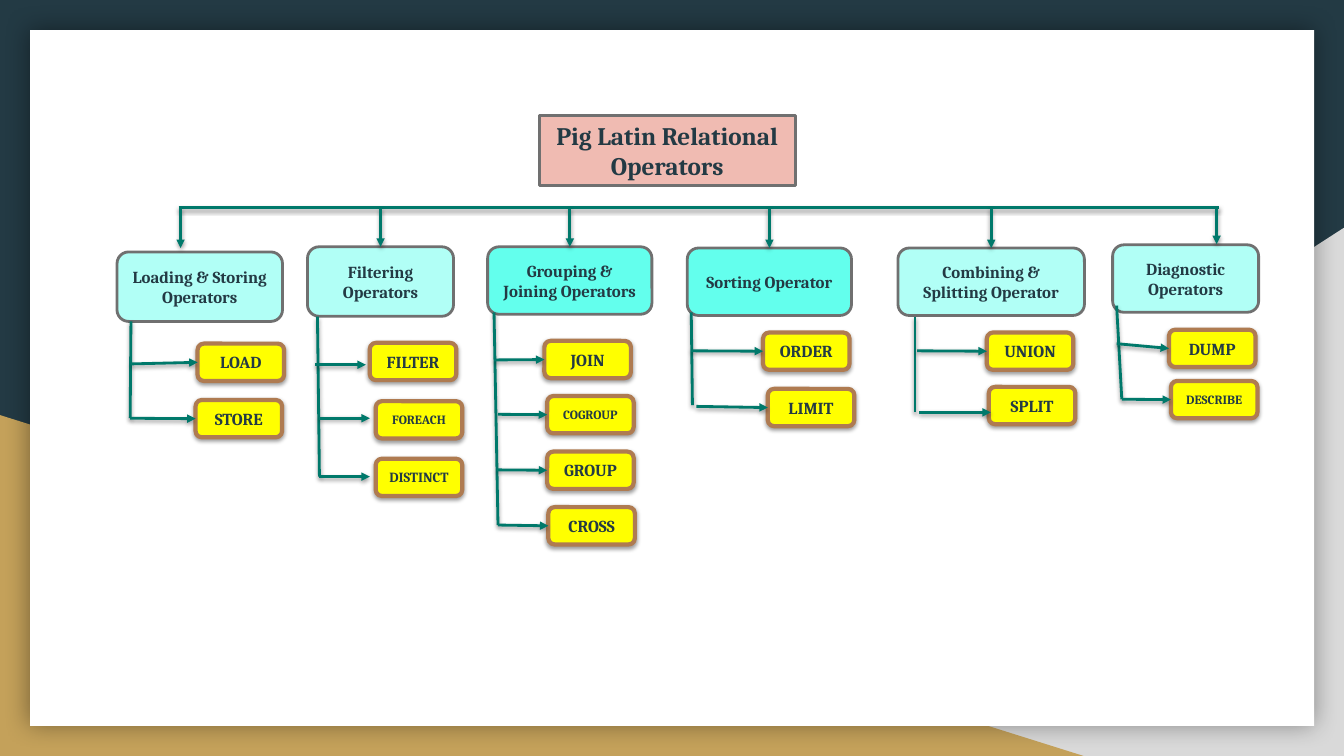
"""Build a slide with the tree of Pig Latin relational operators."""
from lxml.etree import SubElement
from pptx import Presentation
from pptx.dml.color import RGBColor
from pptx.enum.shapes import MSO_CONNECTOR, MSO_SHAPE
from pptx.enum.text import MSO_ANCHOR, PP_ALIGN
from pptx.oxml.ns import qn
from pptx.util import Cm, Pt

INK, TEAL, GREY, BROWN = "233A44", "00796B", "707070", "AF7B51"
PALE, BRIGHT, YELLOW = "B1FFF6", "63FFED", "FFFF00"
SOFT = (38, 3.1, 1.6)
BUS_Y = 5.23
ITEM_WIDTH, ITEM_HEIGHT = 2.18, 0.94


def paint(shape, fill=None, line=None, width=2, shadow=None, arrow=False):
    """Set fill, outline, arrowhead and shadow (opacity, blur, distance)."""
    properties = shape._element.spPr
    if fill:
        shape.fill.solid()
        shape.fill.fore_color.rgb = RGBColor.from_string(fill)
    if line:
        shape.line.color.rgb = RGBColor.from_string(line)
        shape.line.width = Pt(width)
    else:
        shape.line.fill.background()
    if arrow:
        SubElement(properties.find(qn("a:ln")), qn("a:tailEnd"), type="triangle")
    effects = SubElement(properties, qn("a:effectLst"))
    if shadow:
        opacity, blur, distance = shadow
        outer = SubElement(effects, qn("a:outerShdw"), blurRad=str(Pt(blur)),
                           dist=str(Pt(distance)), dir="5400000", rotWithShape="0")
        black = SubElement(outer, qn("a:srgbClr"), val="000000")
        SubElement(black, qn("a:alpha"), val=str(opacity * 1000))


def write(shape, text, size):
    """Put centred bold text into a shape."""
    frame = shape.text_frame
    frame.text = text
    frame.word_wrap = True
    frame.vertical_anchor = MSO_ANCHOR.MIDDLE
    for para in frame.paragraphs:
        para.alignment = PP_ALIGN.CENTER
        para.line_spacing = 1.0
        for span in para.runs:
            span.font.name = "Cambria"
            span.font.size = Pt(size)
            span.font.bold = True
            span.font.color.rgb = RGBColor.from_string(INK)


deck = Presentation()
deck.slide_width, deck.slide_height = Cm(33.87), Cm(19.05)
page = deck.slides.add_slide(deck.slide_layouts[5])
shapes = page.shapes
page.background.fill.solid()
page.background.fill.fore_color.rgb = RGBColor.from_string(INK)

grey_corner = shapes.add_shape(MSO_SHAPE.RIGHT_TRIANGLE, Cm(13.26), Cm(5.74), Cm(20.61), Cm(13.31))
grey_corner._element.spPr.xfrm.set("flipH", "1")
paint(grey_corner, "D9D9D9")
gold_corner = shapes.add_shape(MSO_SHAPE.RIGHT_TRIANGLE, Cm(0), Cm(10.46), Cm(27.31), Cm(8.59))
paint(gold_corner, "C4A15A")
card = shapes.add_shape(MSO_SHAPE.RECTANGLE, Cm(0.76), Cm(0.76), Cm(32.36), Cm(17.53))
paint(card, "FFFFFF", shadow=(40, 18, 0))

title = shapes.title
title.left, title.top, title.width, title.height = Cm(13.59), Cm(2.92), Cm(6.45), Cm(1.75)
outline = SubElement(title._element.spPr, qn("a:prstGeom"), prst="roundRect")
SubElement(outline, qn("a:avLst"))
paint(title, "F0BBB2", GREY)
write(title, "Pig Latin Relational Operators", 18)
card._element.addnext(title._element)

bus = shapes.add_connector(MSO_CONNECTOR.STRAIGHT, Cm(4.5), Cm(BUS_Y), Cm(30.71), Cm(BUS_Y))
paint(bus, line=TEAL, shadow=SOFT)

# Category: text, box, fill, arrow x and free end y (None when joined), stem, items.
# Item: text, size, left, top, branch start x and y, free end x (None when joined).
categories = [
    ("Loading & Storing\nOperators", (2.95, 6.35, 4.17, 1.75), PALE, 4.55, 6.25,
     (3.3, 8.1, 3.28, 10.54),
     [("LOAD", 12, 4.98, 8.66, 3.3, 9.17, None),
      ("STORE", 12, 4.93, 10.08, 3.28, 10.54, None)]),
    ("Filtering\nOperators", (7.75, 6.22, 3.68, 1.75), PALE, 9.59, None,
     (8, 7.98, 8.05, 12.01),
     [("FILTER", 12, 9.32, 8.64, 7.95, 9.19, 9.22),
      ("FOREACH", 9, 9.47, 10.11, 8.05, 10.54, 9.32),
      ("DISTINCT", 10, 9.47, 11.56, 8.05, 12.01, 9.32)]),
    ("Grouping & Joining Operators", (12.29, 6.22, 4.14, 1.7), BRIGHT, 14.36, None,
     (12.45, 7.87, 12.55, 13.23),
     [("JOIN", 12, 13.72, 8.59, 12.45, 9.07, None),
      ("COGROUP", 9, 13.79, 9.98, 12.55, 10.44, None),
      ("GROUP", 12, 13.79, 11.38, 12.52, 11.84, None),
      ("CROSS", 12, 13.82, 12.78, 12.55, 13.23, None)]),
    ("Sorting Operator", (17.32, 6.25, 4.14, 1.7), BRIGHT, 19.39, None,
     (17.42, 7.87, 17.45, 10.21),
     [("ORDER", 12, 19.23, 8.38, 17.42, 8.84, None),
      ("LIMIT", 12, 19.35, 9.8, 17.55, 10.24, None)]),
    ("Combining & Splitting Operator", (22.63, 6.25, 4.7, 1.7), PALE, 24.98, None,
     (23.06, 7.98, 23.06, 10.39),
     [("UNION", 12, 24.87, 8.38, 23.11, 8.84, None),
      ("SPLIT", 12, 24.92, 9.75, 23.16, 10.39, 24.97)]),
    ("Diagnostic Operators", (28.04, 6.17, 3.68, 1.7), PALE, 30.66, 6.15,
     (28.14, 7.7, 28.27, 10.06),
     [("DUMP", 12, 29.46, 8.31, 28.14, 8.66, None),
      ("DESCRIBE", 9, 29.51, 9.6, 28.27, 10.06, None)]),
]

for name, place, fill, drop_x, drop_end, stem_ends, items in categories:
    box = shapes.add_shape(MSO_SHAPE.ROUNDED_RECTANGLE, *map(Cm, place))
    paint(box, fill, GREY)
    write(box, name, 12)
    drop = shapes.add_connector(MSO_CONNECTOR.STRAIGHT, Cm(drop_x), Cm(BUS_Y),
                                Cm(drop_x), Cm(drop_end or place[1]))
    if drop_end is None:
        drop.end_connect(box, 0)
    paint(drop, line=TEAL, shadow=SOFT, arrow=True)
    stem = shapes.add_connector(MSO_CONNECTOR.STRAIGHT, *map(Cm, stem_ends))
    paint(stem, line=TEAL, shadow=SOFT)
    for operator, size, left, top, start_x, start_y, free_end in items:
        item = shapes.add_shape(MSO_SHAPE.ROUNDED_RECTANGLE, Cm(left), Cm(top),
                                Cm(ITEM_WIDTH), Cm(ITEM_HEIGHT))
        paint(item, YELLOW, BROWN, 3, SOFT)
        write(item, operator, size)
        branch = shapes.add_connector(MSO_CONNECTOR.STRAIGHT, Cm(start_x), Cm(start_y),
                                      Cm(free_end or left), Cm(start_y))
        if free_end is None:
            branch.end_connect(item, 1)
        paint(branch, line=TEAL, shadow=SOFT, arrow=True)

deck.save("out.pptx")
